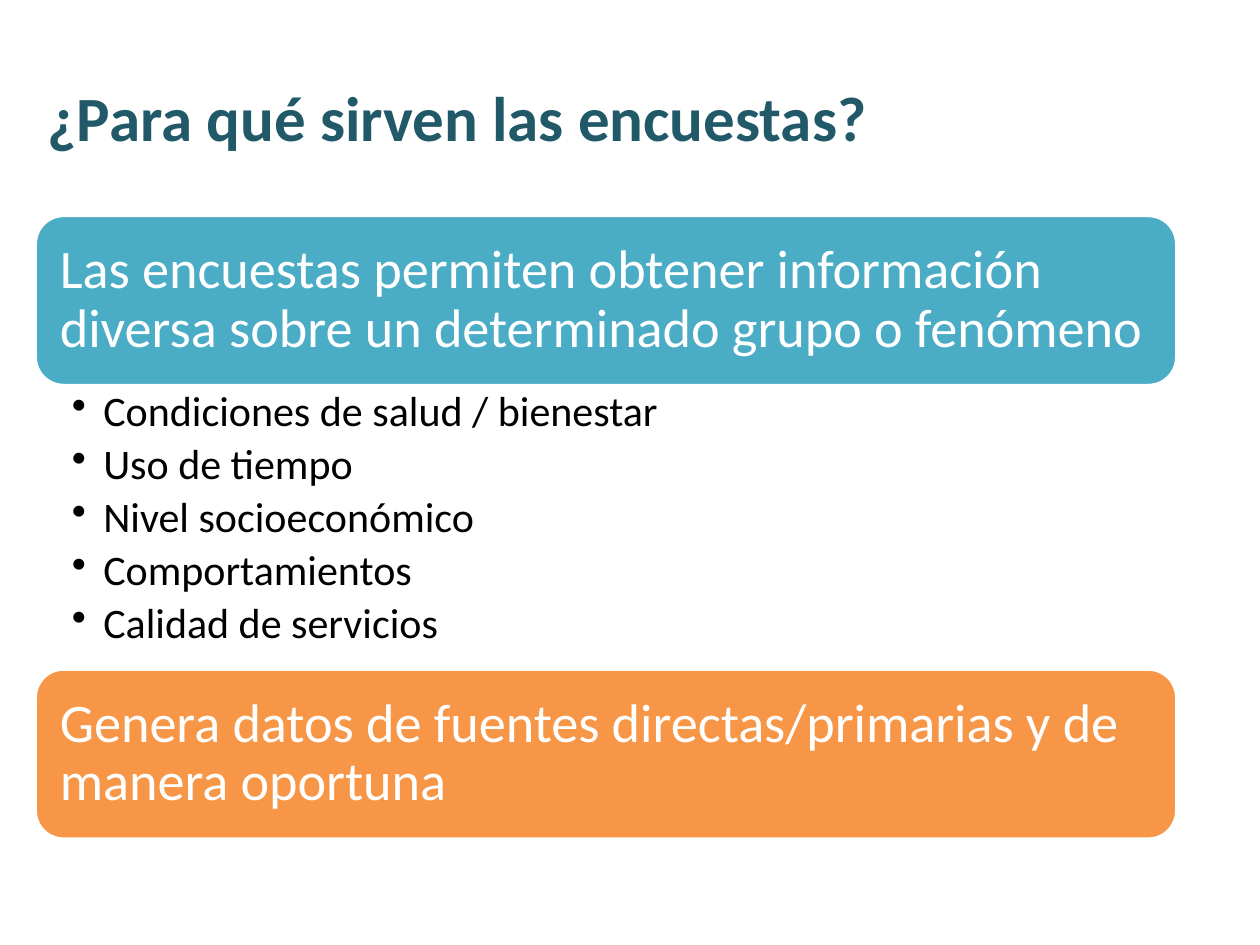
from dataclasses import dataclass

from lxml import etree
from pptx import Presentation
from pptx.dml.color import RGBColor
from pptx.enum.shapes import MSO_SHAPE
from pptx.enum.text import MSO_ANCHOR, PP_ALIGN
from pptx.oxml.ns import qn
from pptx.util import Inches, Pt

ROUNDED = MSO_SHAPE.ROUNDED_RECTANGLE
MIDDLE, TOP = MSO_ANCHOR.MIDDLE, MSO_ANCHOR.TOP
LEFT_ALIGN = PP_ALIGN.LEFT
BLANK_LAYOUT = 6


@dataclass(frozen=True)
class Theme:
    """Colours and type sizes of the slide."""
    font: str = "Calibri"
    title: str = "215968"
    teal: str = "4BACC6"
    orange: str = "F79646"
    white: str = "FFFFFF"
    black: str = "000000"
    title_size: int = 36
    band_size: int = 31
    bullet_size: int = 24


THEME = Theme()
LEFT, WIDTH = 0.28, 9.06
BANDS_TOP, BAND_HEIGHT, LIST_HEIGHT = 1.71, 1.35, 2.25
LINE_SPACING = 0.9
TOPICS = (
    "Condiciones de salud / bienestar",
    "Uso de tiempo",
    "Nivel socioeconómico",
    "Comportamientos",
    "Calidad de servicios",
)


def set_frame(frame, anchor, left, top, right, bottom):
    """Wrap the text and set its anchor and margins in inches."""
    frame.word_wrap = True
    frame.vertical_anchor = anchor
    frame.margin_left, frame.margin_top = Inches(left), Inches(top)
    frame.margin_right, frame.margin_bottom = Inches(right), Inches(bottom)


def style_text(frame, size, color, bold=False):
    """Left-align every paragraph and format its runs."""
    for para in frame.paragraphs:
        para.alignment = LEFT_ALIGN
        for span in para.runs:
            span.font.name = THEME.font
            span.font.size = Pt(size)
            span.font.bold = bold
            span.font.color.rgb = RGBColor.from_string(color)


def add_box(page, top, width, height):
    """Add a text box at the common left edge."""
    return page.shapes.add_textbox(
        Inches(LEFT), Inches(top), Inches(width), Inches(height)
    )


def add_title(page, text):
    """Add the slide title."""
    frame = add_box(page, 0.3, 8.98, 1.25).text_frame
    set_frame(frame, MIDDLE, 0.1, 0.05, 0.1, 0.05)
    frame.text = text
    style_text(frame, THEME.title_size, THEME.title, bold=True)


def add_band(page, top, text, color):
    """Add a rounded band that holds a statement."""
    band = page.shapes.add_shape(
        ROUNDED, Inches(LEFT), Inches(top), Inches(WIDTH), Inches(BAND_HEIGHT)
    )
    band.shadow.inherit = False
    band.fill.solid()
    band.fill.fore_color.rgb = RGBColor.from_string(color)
    band.line.color.rgb = RGBColor.from_string(THEME.white)
    band.line.width = Pt(2)
    frame = band.text_frame
    set_frame(frame, MIDDLE, 0.13, 0.13, 0.13, 0.13)
    frame.text = text
    frame.paragraphs[0].line_spacing = LINE_SPACING
    style_text(frame, THEME.band_size, THEME.white)


def add_bullet(para):
    """Give a paragraph a hanging round bullet."""
    properties = para._p.get_or_add_pPr()
    properties.set("marL", str(Inches(0.25)))
    properties.set("indent", str(Inches(-0.25)))
    etree.SubElement(properties, qn("a:buChar")).set("char", "•")


def add_topics(page, top, topics):
    """Add the bulleted list of topics."""
    frame = add_box(page, top, WIDTH, LIST_HEIGHT).text_frame
    set_frame(frame, TOP, 0.29, 0.04, 0.24, 0.04)
    frame.text = "\n".join(topics)
    for para in frame.paragraphs:
        add_bullet(para)
        para.line_spacing = LINE_SPACING
        para.space_after = Pt(4.3)
    style_text(frame, THEME.bullet_size, THEME.black)


def main():
    """Build and save the slide."""
    deck = Presentation()
    deck.slide_width, deck.slide_height = Inches(10), Inches(7.5)
    page = deck.slides.add_slide(deck.slide_layouts[BLANK_LAYOUT])
    list_top = BANDS_TOP + BAND_HEIGHT
    add_title(page, "¿Para qué sirven las encuestas?")
    add_band(
        page,
        BANDS_TOP,
        "Las encuestas permiten obtener información diversa "
        "sobre un determinado grupo o fenómeno",
        THEME.teal,
    )
    add_topics(page, list_top, TOPICS)
    add_band(
        page,
        list_top + LIST_HEIGHT,
        "Genera datos de fuentes directas/primarias y de manera oportuna",
        THEME.orange,
    )
    deck.save("out.pptx")


if __name__ == "__main__":
    main()
